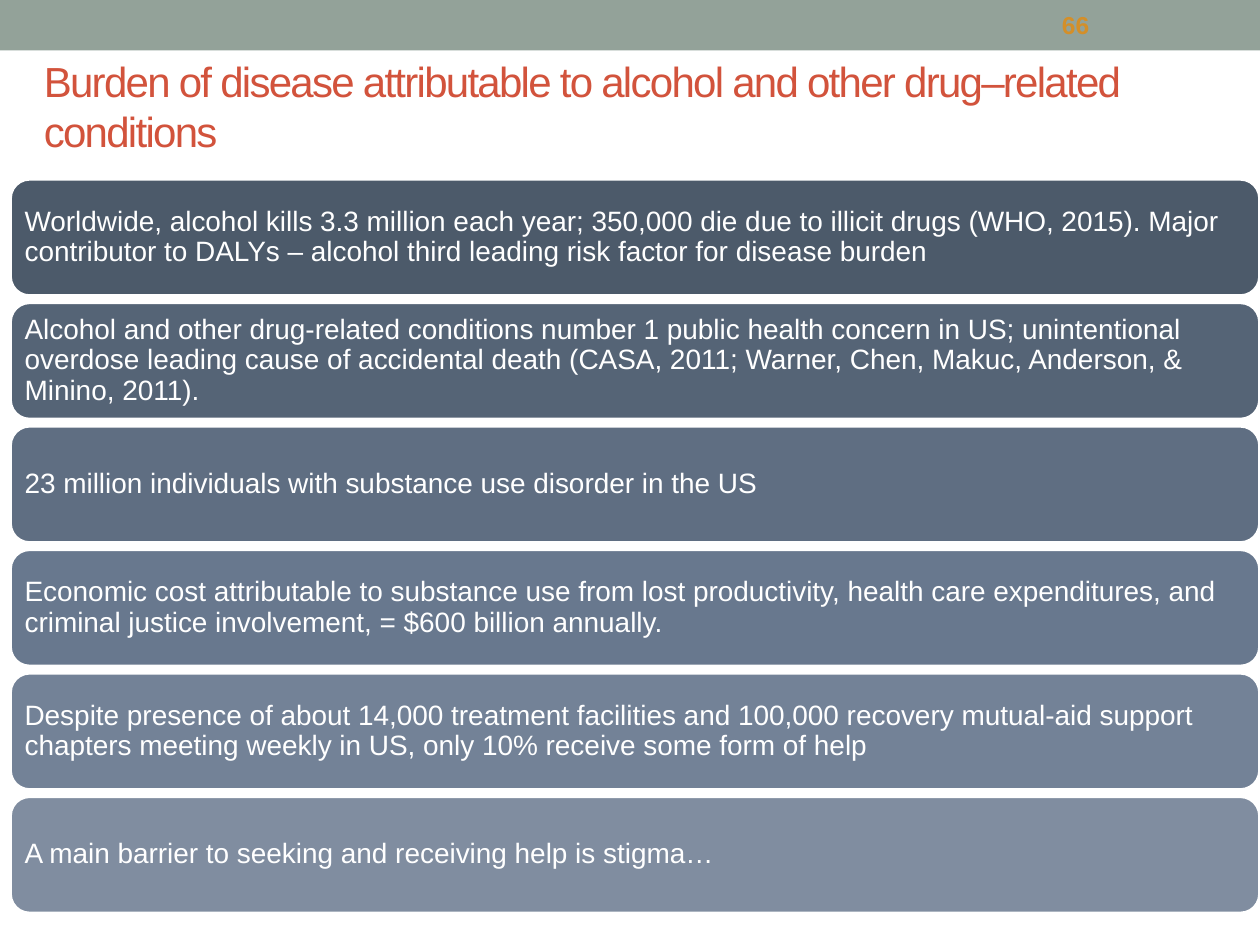
from pptx import Presentation
from pptx.dml.color import RGBColor
from pptx.enum import shapes, text
from pptx.util import Inches, Pt

COLORS = {"band": "93A299", "title": "D2533C", "number": "D48F29", "white": "FFFFFF"}
TITLE = "Burden of disease attributable to alcohol and other drug–related conditions"
PAGE_NUMBER = "66"
FACTS = [
    ("4C5A6A", "Worldwide, alcohol kills 3.3 million each year; 350,000 die due to illicit "
               "drugs (WHO, 2015). Major contributor to DALYs – alcohol third leading risk "
               "factor for disease burden"),
    ("556476", "Alcohol and other drug-related conditions number 1 public health concern in "
               "US; unintentional overdose leading cause of accidental death (CASA, 2011; "
               "Warner, Chen, Makuc, Anderson, & Minino, 2011)."),
    ("5F6E82", "23 million individuals with substance use disorder in the US"),
    ("68788E", "Economic cost attributable to substance use from lost productivity, health "
               "care expenditures, and criminal justice involvement, = $600 billion annually."),
    ("738297", "Despite presence of about 14,000 treatment facilities and 100,000 recovery "
               "mutual-aid support chapters meeting weekly in US, only 10% receive some form "
               "of help"),
    ("808DA0", "A main barrier to seeking and receiving help is stigma…"),
]
CARD_LEFT, CARD_TOP, CARD_WIDTH, CARD_HEIGHT = 0.08, 1.42, 9.92, 0.93
CARD_PITCH = 0.98
CARD_INSET = 0.07


def add_block(s, kind, box, fill):
    sp = s.shapes.add_shape(kind, *map(Inches, box))
    sp.shadow.inherit = False
    sp.fill.solid()
    sp.fill.fore_color.rgb = RGBColor.from_string(fill)
    sp.line.fill.background()
    return sp


def write(sp, words, color, size, bold=False):
    tf = sp.text_frame
    tf.word_wrap = True
    tf.vertical_anchor = text.MSO_ANCHOR.MIDDLE
    p = tf.paragraphs[0]
    p.alignment = text.PP_ALIGN.LEFT
    r = p.add_run()
    r.text = words
    for name, value in {"name": "Arial", "size": Pt(size), "bold": bold}.items():
        setattr(r.font, name, value)
    r.font.color.rgb = RGBColor.from_string(color)
    return r


def add_card(s, row, fill, words):
    box = CARD_LEFT, CARD_TOP + row * CARD_PITCH, CARD_WIDTH, CARD_HEIGHT
    sp = add_block(s, shapes.MSO_SHAPE.ROUNDED_RECTANGLE, box, fill)
    sp.line.color.rgb = RGBColor.from_string(COLORS["white"])
    sp.line.width = Pt(2.08)
    for side in ("left", "top", "right", "bottom"):
        setattr(sp.text_frame, f"margin_{side}", Inches(CARD_INSET))
    write(sp, words, COLORS["white"], 16)
    sp.text_frame.paragraphs[0].line_spacing = 0.9


def main():
    prs = Presentation()
    prs.slide_width, prs.slide_height = Inches(10), Inches(7.5)
    s = prs.slides.add_slide(prs.slide_layouts[6])

    add_block(s, shapes.MSO_SHAPE.RECTANGLE, (0, 0, 10, 0.4), COLORS["band"])
    title = s.shapes.add_textbox(*map(Inches, (0.25, 0.38, 9.5, 0.92)))
    r = write(title, TITLE, COLORS["title"], 24)
    r.font._element.set("spc", "-100")  # letter spacing, hundredths of a point

    for row, (fill, words) in enumerate(FACTS):
        add_card(s, row, fill, words)

    number = s.shapes.add_textbox(*map(Inches, (8.33, 0.02, 1.17, 0.36)))
    write(number, PAGE_NUMBER, COLORS["number"], 14, bold=True)
    prs.save("out.pptx")


if __name__ == "__main__":
    main()
